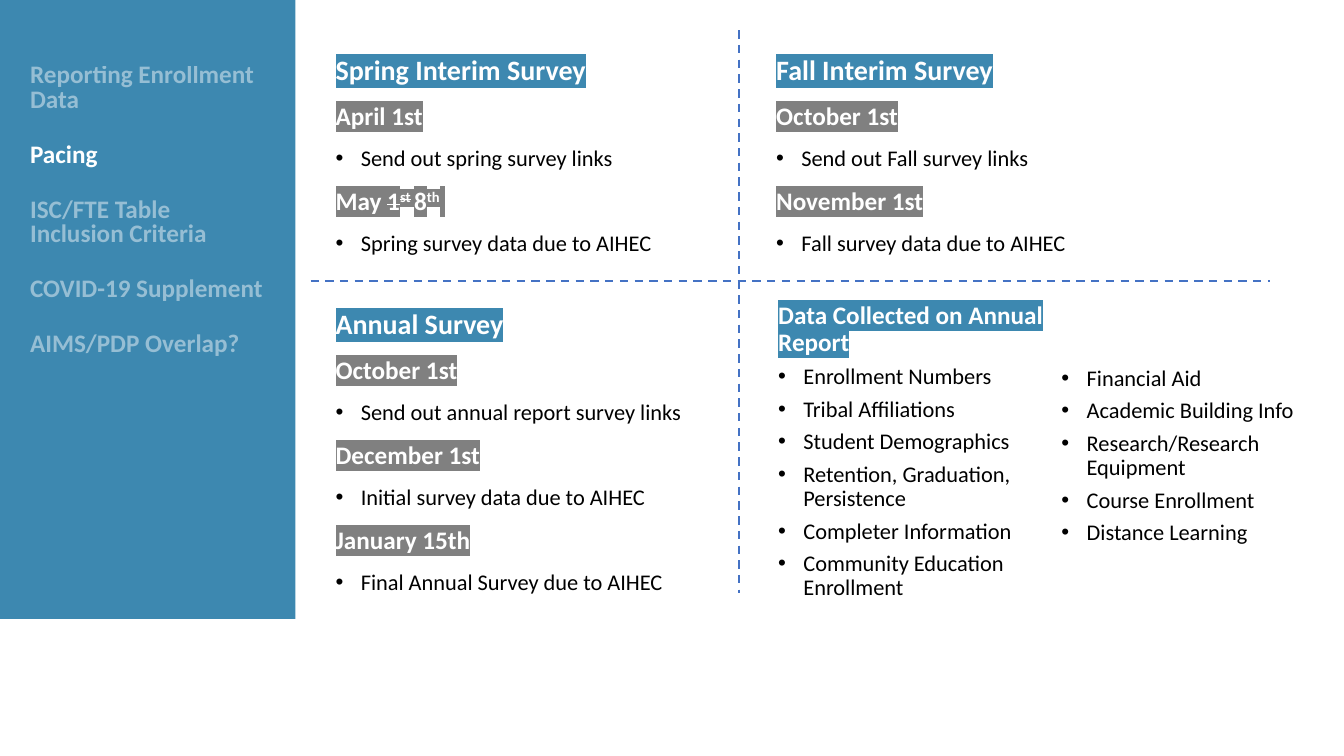
from lxml.etree import SubElement
from pptx import Presentation
from pptx.dml.color import RGBColor
from pptx.enum.dml import MSO_LINE
from pptx.enum.shapes import MSO_CONNECTOR, MSO_SHAPE
from pptx.oxml.ns import qn
from pptx.util import Inches, Pt

BLUE = RGBColor(0x3D, 0x88, 0xB0)
GRAY = RGBColor(0x80, 0x80, 0x80)
LINE_BLUE = RGBColor(0x44, 0x72, 0xC4)
WHITE = RGBColor(0xFF, 0xFF, 0xFF)
BLACK = RGBColor(0x00, 0x00, 0x00)

STRIKE = {"strike": "sngStrike"}
RAISED = {"baseline": "30000"}

TOPICS = ["Reporting Enrollment Data", "Pacing", "ISC/FTE Table Inclusion Criteria",
          "COVID-19 Supplement", "AIMS/PDP Overlap?"]
CURRENT_TOPIC = "Pacing"

MAY_DATE = [("May ", {}), ("1", STRIKE), ("st", STRIKE | RAISED), (" ", RAISED),
            ("8", {}), ("th", RAISED), (" ", {})]
# left, top, width, height, title, (date, task) pairs
SCHEDULES = [
    (3.23, 0.51, 3.99, 2.28, "Spring Interim Survey",
     [("April 1st", "Send out spring survey links"),
      (MAY_DATE, "Spring survey data due to AIHEC")]),
    (7.6, 0.51, 4.58, 2.28, "Fall Interim Survey",
     [("October 1st", "Send out Fall survey links"),
      ("November 1st", "Fall survey data due to AIHEC")]),
    (3.23, 3.03, 3.99, 3.11, "Annual Survey",
     [("October 1st", "Send out annual report survey links"),
      ("December 1st", "Initial survey data due to AIHEC"),
      ("January 15th", "Final Annual Survey due to AIHEC")]),
]
COLLECTED = ["Enrollment Numbers", "Tribal Affiliations", "Student Demographics",
             "Retention, Graduation, Persistence", "Completer Information",
             "Community Education Enrollment"]
COLLECTED_MORE = ["Financial Aid", "Academic Building Info",
                  "Research/Research Equipment", "Course Enrollment", "Distance Learning"]


class SlideBuilder:
    def __init__(self, slide, font_name="Calibri"):
        self.slide = slide
        self.font_name = font_name

    def add_panel(self, left, top, width, height, color):
        panel = self.slide.shapes.add_shape(
            MSO_SHAPE.RECTANGLE, Inches(left), Inches(top), Inches(width), Inches(height))
        panel.shadow.inherit = False
        panel.fill.solid()
        panel.fill.fore_color.rgb = color
        panel.line.fill.background()

    def add_dashed_line(self, start, end):
        line = self.slide.shapes.add_connector(
            MSO_CONNECTOR.STRAIGHT, *map(Inches, start), *map(Inches, end))
        line.line.color.rgb = LINE_BLUE
        line.line.width = Pt(1.5)
        line.line.dash_style = MSO_LINE.DASH
        SubElement(line._element.spPr, qn("a:effectLst"))

    def add_text_frame(self, left, top, width, height):
        box = self.slide.shapes.add_textbox(
            Inches(left), Inches(top), Inches(width), Inches(height))
        box.text_frame.word_wrap = True
        return box.text_frame

    def add_paragraph(self, text_frame, text, space_before, line_spacing=0.9):
        """Fill the empty first paragraph, or append one below the others."""
        paragraph = text_frame.paragraphs[0]
        if paragraph.runs:
            paragraph = text_frame.add_paragraph()
            paragraph.space_before = Pt(space_before)
        else:
            paragraph.space_before = Pt(0)
        paragraph.line_spacing = line_spacing
        paragraph.text = text
        return paragraph

    def style_run(self, run, size, color, bold, highlight=None, alpha=None):
        run.font.name = self.font_name
        run.font.size = Pt(size)
        run.font.bold = bold
        run.font.color.rgb = color
        fill = run._r.get_or_add_rPr().find(qn("a:solidFill"))
        if alpha is not None:
            SubElement(fill[0], qn("a:alpha"), val=str(alpha * 1000))
        if highlight is not None:
            mark = SubElement(run._r.rPr, qn("a:highlight"))
            SubElement(mark, qn("a:srgbClr"), val=str(highlight))
            fill.addnext(mark)

    def add_heading(self, text_frame, text, size, highlight):
        """Add a highlighted heading; text is a string or (text, run attributes) pairs."""
        pieces = [(text, {})] if isinstance(text, str) else text
        paragraph = self.add_paragraph(text_frame, "", 12)
        for piece, attributes in pieces:
            run = paragraph.add_run()
            run.text = piece
            self.style_run(run, size, WHITE, True, highlight)
            for name, value in attributes.items():
                run._r.rPr.set(name, value)

    def add_bullet(self, text_frame, text, space_before):
        paragraph = self.add_paragraph(text_frame, text, space_before)
        properties = paragraph._p.get_or_add_pPr()
        properties.set("marL", str(Inches(0.25)))
        properties.set("indent", str(-Inches(0.25)))
        SubElement(properties, qn("a:buFont"), typeface="Arial")
        SubElement(properties, qn("a:buChar"), char="•")
        self.style_run(paragraph.runs[0], 16, BLACK, False)

    def add_schedule(self, left, top, width, height, title, entries):
        text_frame = self.add_text_frame(left, top, width, height)
        self.add_heading(text_frame, title, 20, BLUE)
        for date, task in entries:
            self.add_heading(text_frame, date, 18, GRAY)
            self.add_bullet(text_frame, task, 12)

    def add_list(self, left, top, width, height, items, title=None):
        text_frame = self.add_text_frame(left, top, width, height)
        if title:
            self.add_heading(text_frame, title, 18, BLUE)
        for item in items:
            self.add_bullet(text_frame, item, 6)

    def add_navigation(self, left, top, width, height, topics, current):
        text_frame = self.add_text_frame(left, top, width, height)
        for topic in topics:
            paragraph = self.add_paragraph(text_frame, topic, 10, 0.8)
            paragraph.space_after = Pt(12)
            self.style_run(paragraph.runs[0], 18, WHITE, True,
                           alpha=None if topic == current else 45)


def main():
    presentation = Presentation()
    presentation.slide_width = Inches(13.33)
    presentation.slide_height = Inches(7.5)
    builder = SlideBuilder(presentation.slides.add_slide(presentation.slide_layouts[6]))

    builder.add_panel(0, 0, 2.93, 6.14, BLUE)
    for schedule in SCHEDULES:
        builder.add_schedule(*schedule)
    builder.add_list(7.62, 2.95, 3.01, 3.11, COLLECTED, "Data Collected on Annual Report")
    builder.add_list(10.43, 3.59, 2.9, 2.47, COLLECTED_MORE)
    builder.add_dashed_line((3.08, 2.79), (12.6, 2.79))
    builder.add_dashed_line((7.33, 0.3), (7.33, 5.88))
    builder.add_navigation(0.2, 0.59, 2.55, 3.61, TOPICS, CURRENT_TOPIC)

    presentation.save("out.pptx")


if __name__ == "__main__":
    main()
